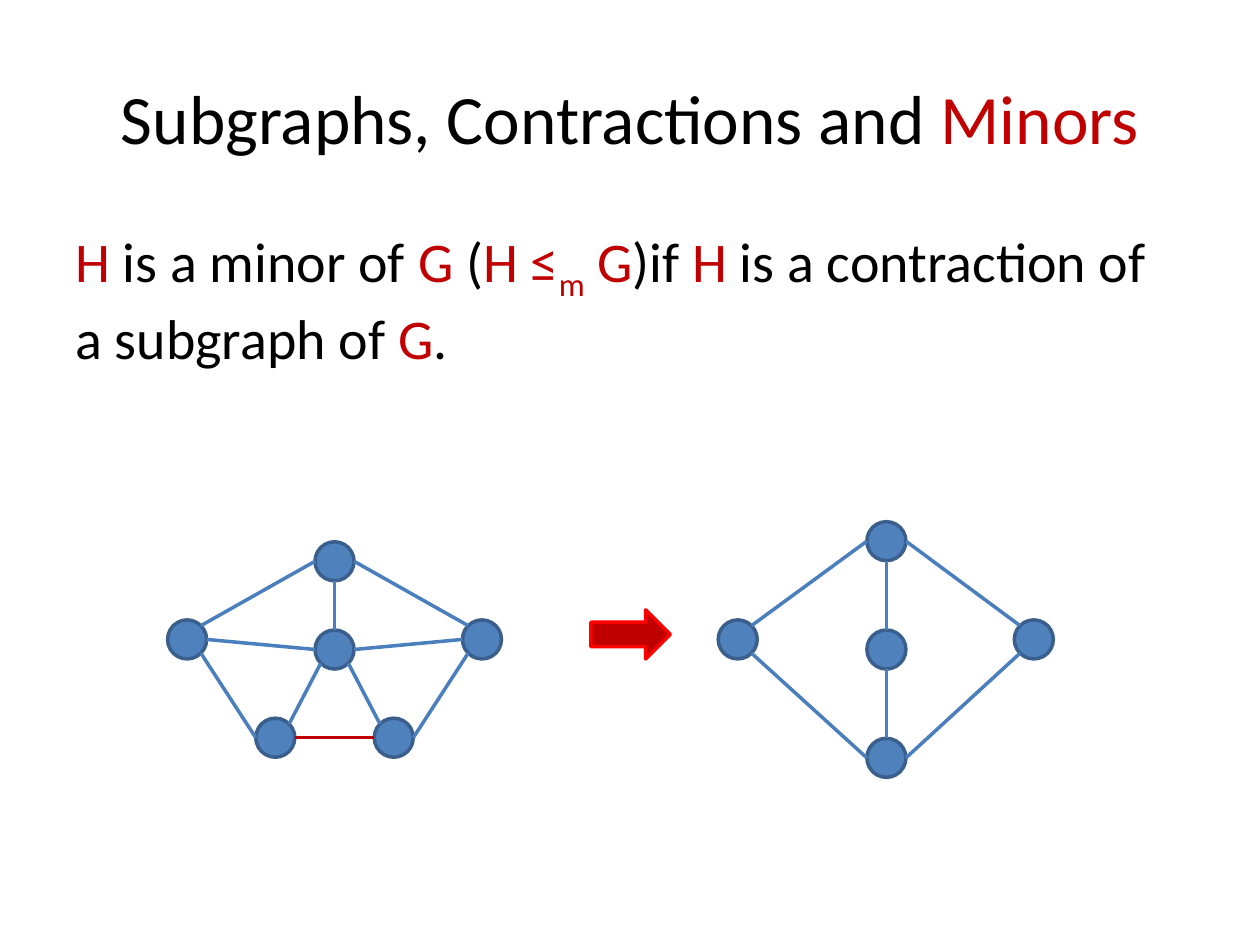
import math
from dataclasses import dataclass

import pptx
import pptx.dml.color
import pptx.enum.shapes
import pptx.enum.text
import pptx.oxml
import pptx.util
from pptx.util import Inches

SHAPE = pptx.enum.shapes.MSO_SHAPE
RGB = pptx.dml.color.RGBColor.from_string


@dataclass(frozen=True)
class Theme:
    font: str = "Calibri"
    title: float = 39.6
    body: float = 32
    line: float = 2
    ink: str = "000000"
    red: str = "C00000"
    rim: str = "FF0000"
    node: str = "4F81BD"
    ring: str = "3A5F8C"
    edge: str = "4B7EBC"


THEME = Theme()
NODE = 0.31  # node diameter

# Compass points on a node, in degrees with y pointing down
SITES = {"e": 0, "se": 45, "s": 90, "sw": 135, "w": 180, "nw": 225, "n": 270, "ne": 315}

# Node corners relative to the graph's box
WHEEL = {
    "top": (1.17, 0), "right": (2.34, 0.62), "lower left": (0.7, 1.4),
    "lower right": (1.64, 1.4), "left": (0, 0.62), "hub": (1.17, 0.7),
}
WHEEL_EDGES = [
    ("left", "se", "lower left", "w"), ("left", "ne", "top", "w"),
    ("lower right", "e", "right", "sw"), ("right", "nw", "top", "e"),
    ("lower left", "ne", "hub", "sw"), ("left", "e", "hub", "w"),
    ("hub", "n", "top", "s"), ("right", "w", "hub", "e"),
    ("lower right", "nw", "hub", "se"),
]
MERGED = [("lower left", "e", "lower right", "w")]

MINOR = {
    "top": (1.18, 0), "right": (2.35, 0.78), "bottom": (1.18, 1.72),
    "left": (0, 0.78), "hub": (1.18, 0.86),
}
MINOR_EDGES = [
    ("left", "se", "bottom", "w"), ("left", "ne", "top", "w"),
    ("bottom", "e", "right", "sw"), ("right", "nw", "top", "e"),
    ("hub", "n", "top", "s"), ("bottom", "n", "hub", "s"),
]


def add_text(slide, box, runs, size):
    """Add one paragraph from (text, colour, baseline) runs; return frame and paragraph."""
    frame = slide.shapes.add_textbox(*map(Inches, box)).text_frame
    frame.word_wrap = True
    para = frame.paragraphs[0]
    para.font.name = THEME.font
    para.font.size = pptx.util.Pt(size)
    for text, color, base in runs:
        run = para.add_run()
        run.text = text
        run.font.color.rgb = RGB(color)
        if base:
            run.font._element.set("baseline", str(base * 1000))
    return frame, para


def add_title(slide, box):
    runs = [("Subgraphs, Contractions and ", THEME.ink, 0), ("Minors", THEME.red, 0)]
    frame, para = add_text(slide, box, runs, THEME.title)
    frame.vertical_anchor = pptx.enum.text.MSO_ANCHOR.MIDDLE
    para.alignment = pptx.enum.text.PP_ALIGN.CENTER


def add_body(slide, box):
    ink, red = THEME.ink, THEME.red
    runs = [
        ("H", red, 0), (" is a minor of ", ink, 0), ("G", red, 0), (" (", ink, 0),
        ("H ≤", red, 0), ("m", red, -25), (" G", red, 0), (")if ", ink, 0),
        ("H", red, 0), (" is a contraction of a subgraph of ", ink, 0),
        ("G", red, 0), (".", ink, 0),
    ]
    para = add_text(slide, box, runs, THEME.body)[1]
    para.space_before = pptx.util.Pt(0.2 * THEME.body)


def add_solid(slide, kind, box, fill, line):
    shape = slide.shapes.add_shape(kind, *map(Inches, box))
    shape.shadow.inherit = False
    shape.fill.solid()
    shape.fill.fore_color.rgb = RGB(fill)
    shape.line.color.rgb = RGB(line)
    shape.line.width = pptx.util.Pt(THEME.line)


def add_edges(slide, left, top, nodes, edges, color):
    def site(name, side):
        x, y = nodes[name]
        turn = math.radians(SITES[side])
        return (Inches(left + x + NODE / 2 * (1 + math.cos(turn))),
                Inches(top + y + NODE / 2 * (1 + math.sin(turn))))

    for start, out, end, into in edges:
        edge = slide.shapes.add_connector(
            pptx.enum.shapes.MSO_CONNECTOR.STRAIGHT, *site(start, out), *site(end, into))
        edge.line.color.rgb = RGB(color)
        edge.line.width = pptx.util.Pt(THEME.line)
        edge._element.spPr.append(pptx.oxml.parse_xml(
            '<a:effectLst xmlns:a="http://schemas.openxmlformats.org/drawingml/2006/main"/>'))


def add_graph(slide, left, top, nodes, edges, merged=()):
    """Draw nodes and edges from the given corner, with merged edges in red."""
    for x, y in nodes.values():
        add_solid(slide, SHAPE.OVAL, (left + x, top + y, NODE, NODE), THEME.node, THEME.ring)
    add_edges(slide, left, top, nodes, edges, THEME.edge)
    add_edges(slide, left, top, nodes, merged, THEME.red)


def main():
    deck = pptx.Presentation()
    deck.slide_width, deck.slide_height = Inches(10), Inches(7.5)
    slide = deck.slides.add_slide(deck.slide_layouts[6])
    add_body(slide, (0.5, 1.75, 9, 4.95))
    add_title(slide, (0.5, 0.3, 9, 1.25))
    add_graph(slide, 1.33, 4.3, WHEEL, WHEEL_EDGES, MERGED)
    add_graph(slide, 5.7, 4.14, MINOR, MINOR_EDGES)
    add_solid(slide, SHAPE.RIGHT_ARROW, (4.69, 4.84, 0.63, 0.39), THEME.red, THEME.rim)
    deck.save("out.pptx")


if __name__ == "__main__":
    main()
